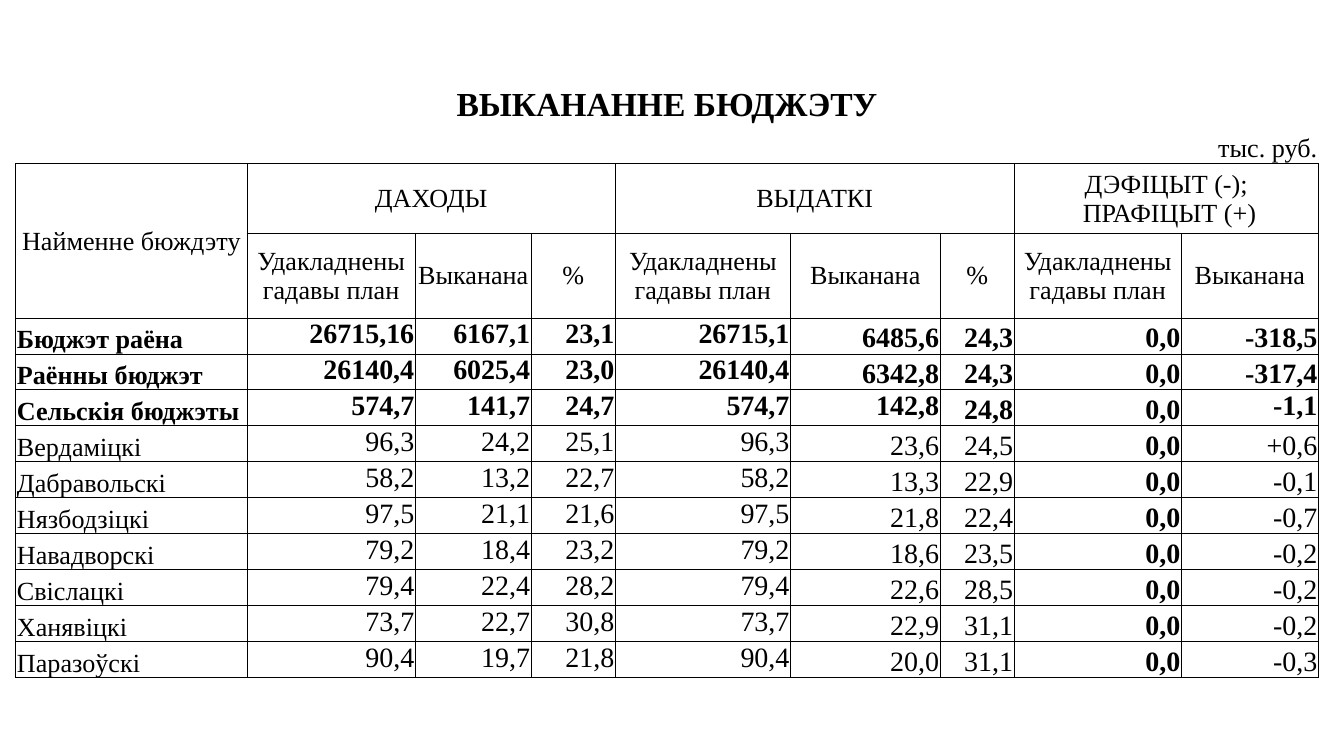
from dataclasses import dataclass

from lxml import etree
from pptx import Presentation
from pptx.dml.color import RGBColor
from pptx.enum.text import MSO_ANCHOR, PP_ALIGN
from pptx.oxml.ns import qn
from pptx.table import Table, _Cell
from pptx.util import Cm, Pt

TOP, MIDDLE, BOTTOM = MSO_ANCHOR.TOP, MSO_ANCHOR.MIDDLE, MSO_ANCHOR.BOTTOM
LEFT, CENTER, RIGHT = PP_ALIGN.LEFT, PP_ALIGN.CENTER, PP_ALIGN.RIGHT
BLACK = RGBColor(0, 0, 0)
FONT = "Times New Roman"
NO_STYLE = "{2D5ABB26-0587-4C30-8999-92F81FD0307C}"
BORDER_WIDTH = Pt(0.5)

COL_WIDTHS = [4.37, 2.54, 0.64, 1.65, 0.54, 1.59, 3.31, 2.26, 0.57, 1.4, 3.16, 0.32, 2.27]
ROW_HEIGHTS = [0.86, 0.68, 1.32, 1.6] + [0.68] * 10
UNIT_ROW, HEADER_ROW, FIRST_DATA_ROW = 1, 2, 4

# Grid columns where each of the nine visible columns starts, and those two wide
VALUE_COLS = [0, 1, 3, 5, 6, 7, 9, 10, 11]
WIDE_COLS = [1, 3, 7, 11]
UNIT_ROW_WIDE_COLS = [2, 4, 8, 10]
TOP_COLS = [1, 3, 5, 6]
BALANCE_PLAN_COL = 10


@dataclass
class Header:
    row: int
    col: int
    lines: list[str]
    rows: int = 1
    cols: int = 1


@dataclass
class Budget:
    name: str
    values: list[str]
    total: bool = False
    raised_cols: tuple[int, ...] = ()


PLAN, DONE = ["Удакладнены гадавы план"], ["Выканана"]
HEADERS = [
    Header(2, 0, ["Найменне бюждэту"], rows=2),
    Header(2, 1, ["ДАХОДЫ"], cols=5),
    Header(2, 6, ["ВЫДАТКІ"], cols=4),
    Header(2, 10, ["ДЭФІЦЫТ (-);", " ПРАФІЦЫТ (+)"], cols=3),
    Header(3, 1, PLAN, cols=2),
    Header(3, 3, DONE, cols=2),
    Header(3, 5, ["%"]),
    Header(3, 6, PLAN),
    Header(3, 7, DONE, cols=2),
    Header(3, 9, ["%"]),
    Header(3, 10, PLAN),
    Header(3, 11, DONE, cols=2),
]

BUDGETS = [
    Budget("Бюджэт раёна",
           ["26715,16", "6167,1", "23,1", "26715,1", "6485,6", "24,3", "0,0", "-318,5"], True),
    Budget("Раённы бюджэт",
           ["26140,4", "6025,4", "23,0", "26140,4", "6342,8", "24,3", "0,0", "-317,4"], True),
    Budget("Сельскія бюджэты",
           ["574,7", "141,7", "24,7", "574,7", "142,8", "24,8", "0,0", "-1,1"], True, (7, 11)),
    Budget("Вердаміцкі", ["96,3", "24,2", "25,1", "96,3", "23,6", "24,5", "0,0", "+0,6"]),
    Budget("Дабравольскі", ["58,2", "13,2", "22,7", "58,2", "13,3", "22,9", "0,0", "-0,1"]),
    Budget("Нязбодзіцкі", ["97,5", "21,1", "21,6", "97,5", "21,8", "22,4", "0,0", "-0,7"]),
    Budget("Навадворскі", ["79,2", "18,4", "23,2", "79,2", "18,6", "23,5", "0,0", "-0,2"]),
    Budget("Свіслацкі", ["79,4", "22,4", "28,2", "79,4", "22,6", "28,5", "0,0", "-0,2"]),
    Budget("Ханявіцкі", ["73,7", "22,7", "30,8", "73,7", "22,9", "31,1", "0,0", "-0,2"]),
    Budget("Паразоўскі", ["90,4", "19,7", "21,8", "90,4", "20,0", "31,1", "0,0", "-0,3"]),
]


def merge(table: Table, row: int, col: int, rows: int = 1, cols: int = 1) -> None:
    if rows * cols > 1:
        table.cell(row, col).merge(table.cell(row + rows - 1, col + cols - 1))


def set_borders(cell: _Cell, sides: str) -> None:
    tcPr = cell._tc.get_or_add_tcPr()
    for i, side in enumerate(sides):
        ln = etree.Element(qn(f"a:ln{side}"), w=str(BORDER_WIDTH))
        fill = etree.SubElement(ln, qn("a:solidFill"))
        etree.SubElement(fill, qn("a:srgbClr"), val=str(BLACK))
        tcPr.insert(i, ln)


def prepare_cell(cell: _Cell, row: int) -> None:
    """Clear the fill, tighten the margins and keep an empty cell low."""
    cell.fill.background()
    cell.margin_left = cell.margin_right = cell.margin_top = Cm(0.02)
    cell.margin_bottom = 0
    p = cell.text_frame.paragraphs[0]
    etree.SubElement(p._p, qn("a:endParaRPr"), sz="1400")
    if row >= HEADER_ROW:
        set_borders(cell, "LRTB")
    elif row == UNIT_ROW:
        set_borders(cell, "B")


def write(cell: _Cell, lines: list[str], size: float, align: PP_ALIGN,
          anchor: MSO_ANCHOR, bold: bool = False) -> None:
    cell.vertical_anchor = anchor
    tf = cell.text_frame
    for i, line in enumerate(lines):
        p = tf.add_paragraph() if i else tf.paragraphs[0]
        p.alignment = align
        r = p.add_run()
        r.text = line
        r.font.name = FONT
        r.font.size = Pt(size)
        r.font.bold = bold
        r.font.color.rgb = BLACK


def write_budget(table: Table, row: int, budget: Budget) -> None:
    for col in WIDE_COLS:
        merge(table, row, col, cols=2)
    write(table.cell(row, 0), [budget.name], 14, LEFT, BOTTOM, budget.total)
    for col, value in zip(VALUE_COLS[1:], budget.values):
        anchor = TOP if col in TOP_COLS or col in budget.raised_cols else BOTTOM
        bold = budget.total or col == BALANCE_PLAN_COL
        write(table.cell(row, col), [value], 15, RIGHT, anchor, bold)


def add_budget_table(s) -> None:
    frame = s.shapes.add_table(len(ROW_HEIGHTS), len(COL_WIDTHS), Cm(0.3), Cm(1.55),
                               Cm(sum(COL_WIDTHS)), Cm(sum(ROW_HEIGHTS)))
    table = frame.table
    table.first_row = table.horz_banding = False
    table._tbl.tblPr.find(qn("a:tableStyleId")).text = NO_STYLE
    for column, width in zip(table.columns, COL_WIDTHS):
        column.width = Cm(width)
    for i, height in enumerate(ROW_HEIGHTS):
        table.rows[i].height = Cm(height)
        for cell in table.rows[i].cells:
            prepare_cell(cell, i)

    last_col = len(COL_WIDTHS) - 1
    merge(table, 0, 0, cols=len(COL_WIDTHS))
    write(table.cell(0, 0), ["ВЫКАНАННЕ БЮДЖЭТУ"], 18, CENTER, MIDDLE, True)
    for col in UNIT_ROW_WIDE_COLS:
        merge(table, UNIT_ROW, col, cols=2)
    write(table.cell(UNIT_ROW, last_col), ["тыс. руб."], 14, RIGHT, BOTTOM)
    for h in HEADERS:
        merge(table, h.row, h.col, h.rows, h.cols)
        write(table.cell(h.row, h.col), h.lines, 14, CENTER, MIDDLE)
    for row, budget in enumerate(BUDGETS, FIRST_DATA_ROW):
        write_budget(table, row, budget)


def main() -> None:
    prs = Presentation()
    prs.slide_width, prs.slide_height = Cm(25.4), Cm(14.29)
    s = prs.slides.add_slide(prs.slide_layouts[6])
    add_budget_table(s)
    prs.save("out.pptx")


if __name__ == "__main__":
    main()
